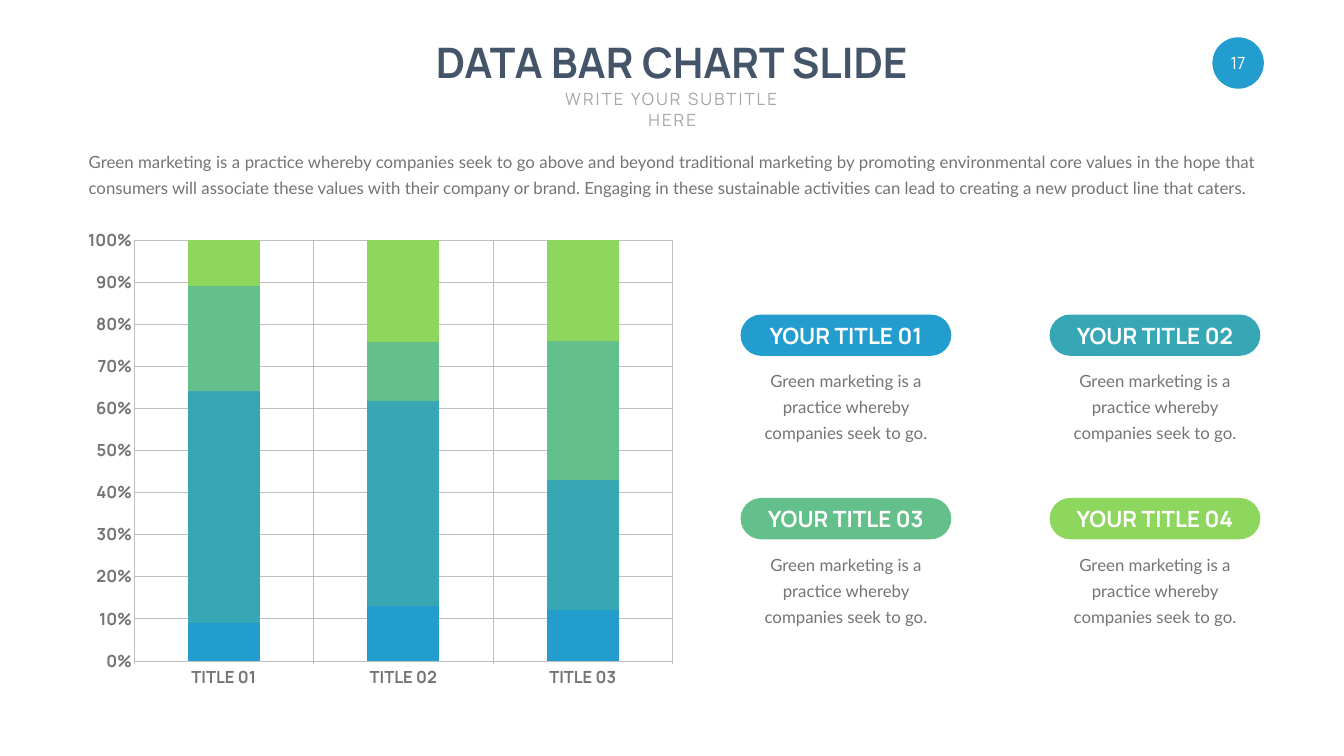
from pptx import Presentation
from pptx.chart.data import CategoryChartData
from pptx.dml.color import RGBColor
from pptx.enum import chart as ch, shapes, text
from pptx.oxml import parse_xml
from pptx.oxml.ns import nsdecls, qn
from pptx.util import Emu, Pt

PX = 9144  # 100 px to the inch
BLUE, TEAL, GREEN, LIME = HUES = "229DCE", "37A7B6", "63C08A", "8ED75E"
GREY, RULE = "737572", "BFBFBF"
MID = text.PP_ALIGN.CENTER
INTRO = (
    "Green marketing is a practice whereby companies seek to go above and beyond "
    "traditional marketing by promoting environmental core values in the hope that "
    "consumers will associate these values with their company or brand. Engaging in "
    "these sustainable activities can lead to creating a new product line that caters."
)
BLURB = "Green marketing is a practice whereby companies seek to go."
DATA = [(9, 13, 12), (55, 48, 31), (25, 14, 33), (11, 24, 24)]
PLOT = {"x": 0.061, "y": 0.02, "w": 0.915, "h": 0.886}


def px(*nums):
    return [Emu(n * PX) for n in nums]


def color(code):
    return RGBColor.from_string(code)


def style(font, size, code, face="Manrope", bold=False):
    font.size, font.name, font.bold = Pt(size), face, bold
    font.color.rgb = color(code)


def write(shape, words, size, code, face="Manrope", bold=False, align=MID,
          wrap=True, anchor=text.MSO_ANCHOR.TOP):
    """Fill a shape with one paragraph and return that paragraph."""
    frame = shape.text_frame
    frame.auto_size = text.MSO_AUTO_SIZE.NONE
    frame.word_wrap, frame.vertical_anchor = wrap, anchor
    frame.text = words
    para = frame.paragraphs[0]
    para.alignment = align
    style(para.font, size, code, face, bold)
    return para


def add_title(slide, words, box):
    title = slide.shapes.title
    title.left, title.top, title.width, title.height = px(*box)
    write(title, words, 60, "445469", bold=True, wrap=False)


def add_subtitle(slide, words, box):
    para = write(slide.shapes.add_textbox(*px(*box)), words, 24, "A6A6A6")
    para.runs[0].font._element.set("spc", "300")


def add_body(slide, words, box, align=MID):
    para = write(slide.shapes.add_textbox(*px(*box)), words, 24, GREY, "Lato", align=align)
    para.line_spacing = Pt(37)


def add_badge(slide, kind, words, box, fill, size, bold=False):
    """Add a filled shape with a white label in its middle."""
    badge = slide.shapes.add_shape(kind, *px(*box))
    badge.shadow.inherit = False
    badge.fill.solid()
    badge.fill.fore_color.rgb = color(fill)
    badge.line.fill.background()
    write(badge, words, size, "FFFFFF", bold=bold, wrap=False,
          anchor=text.MSO_ANCHOR.MIDDLE)
    return badge


def add_card(slide, words, left, top, fill):
    """Add a pill heading with a short text below it."""
    pill = add_badge(slide, shapes.MSO_SHAPE.ROUNDED_RECTANGLE, words,
                     (left, top, 418, 82), fill, 32, True)
    pill.adjustments[0] = 0.5
    add_body(slide, BLURB, (left, top + 96, 418, 160))


def format_axis(axis, tick):
    axis.major_tick_mark, axis.minor_tick_mark = tick, ch.XL_TICK_MARK.NONE
    axis.has_major_gridlines = True
    style(axis.tick_labels.font, 24, GREY, bold=True)
    for line in (axis.format.line, axis.major_gridlines.format.line):
        line.color.rgb = color(RULE)
        line.width = Pt(0.75)


def place_plot(chart):
    """Fix the inner plot area as shares of the chart's size."""
    area = chart._chartSpace.chart.plotArea
    for old in area.findall(qn("c:layout")):
        area.remove(old)
    modes = "".join(f'<c:{key}Mode val="edge"/>' for key in "xy")
    sizes = "".join(f'<c:{key} val="{val}"/>' for key, val in PLOT.items())
    area.insert(0, parse_xml(
        f'<c:layout {nsdecls("c")}><c:manualLayout><c:layoutTarget val="inner"/>'
        f"{modes}{sizes}</c:manualLayout></c:layout>"))


def add_bars(slide, box):
    data = CategoryChartData()
    data.categories = [f"TITLE {n:02}" for n in range(1, 4)]
    for n, vals in enumerate(DATA, 1):
        data.add_series(f"Series {n}", vals)
    chart = slide.shapes.add_chart(
        ch.XL_CHART_TYPE.COLUMN_STACKED_100, *px(*box), data).chart
    chart.has_legend = chart.has_title = False
    style(chart.font, 18, "B9BAB8", "Calibri")
    format_axis(chart.category_axis, ch.XL_TICK_MARK.OUTSIDE)
    format_axis(chart.value_axis, ch.XL_TICK_MARK.NONE)
    labels = chart.value_axis.tick_labels
    labels.number_format, labels.number_format_is_linked = "0%", False
    plot = chart.plots[0]
    plot.gap_width, plot.overlap, plot.vary_by_categories = 150, 100, False
    for series, hue in zip(plot.series, HUES):
        series.format.fill.solid()
        series.format.fill.fore_color.rgb = color(hue)
    place_plot(chart)


def main():
    deck = Presentation()
    deck.slide_width, deck.slide_height = px(2666, 1500)
    slide = deck.slides.add_slide(deck.slide_layouts[5])
    add_badge(slide, shapes.MSO_SHAPE.OVAL, "17", (2405, 74, 102, 102), BLUE, 24)
    add_title(slide, "DATA BAR CHART SLIDE", (834, 67, 997, 111))
    add_subtitle(slide, "WRITE YOUR SUBTITLE HERE", (1062, 172, 543, 90))
    add_bars(slide, (175, 453, 1187, 947))
    add_body(slide, INTRO, (166, 284, 2333, 108), text.PP_ALIGN.JUSTIFY)
    for n, hue in enumerate(HUES):
        row, col = divmod(n, 2)
        add_card(slide, f"YOUR TITLE {n + 1:02}", 1469 + 613 * col, 624 + 364 * row, hue)
    deck.save("out.pptx")


if __name__ == "__main__":
    main()
